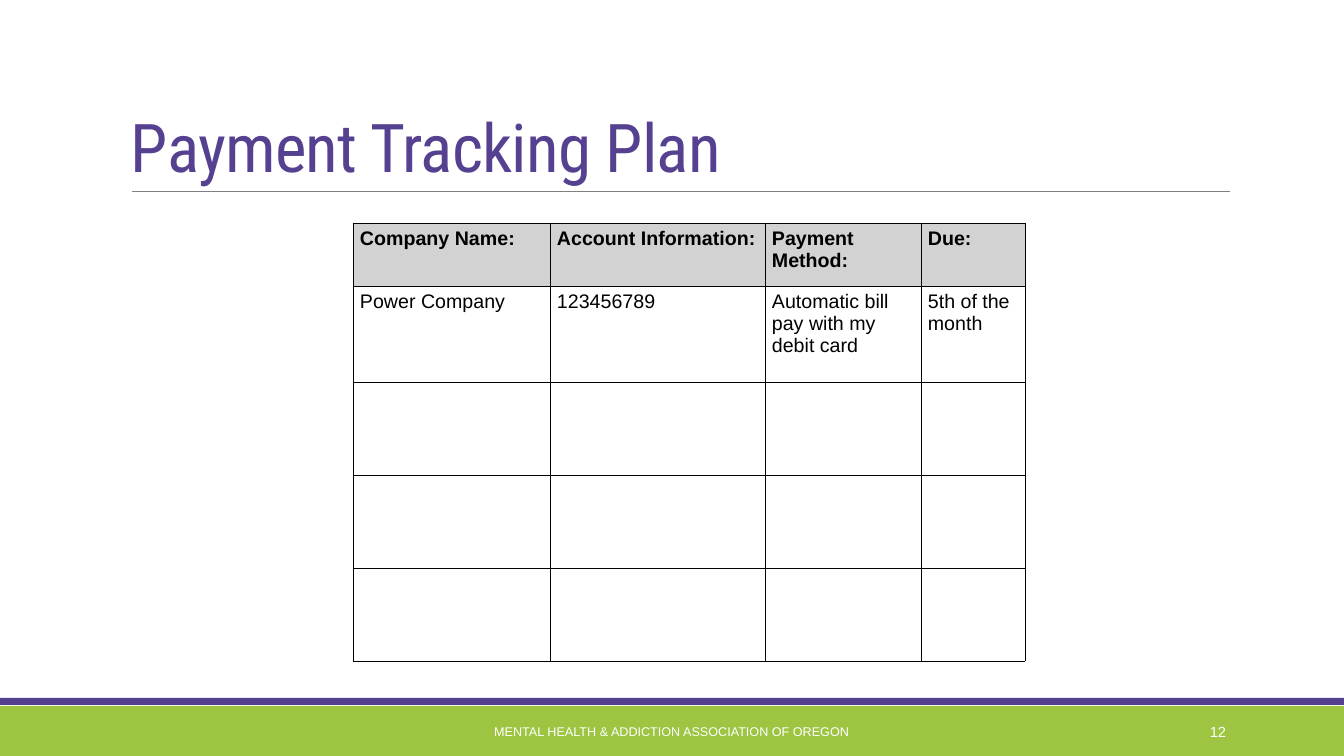
from lxml import etree
from pptx import Presentation
from pptx.dml.color import RGBColor
from pptx.enum.shapes import MSO_CONNECTOR, MSO_SHAPE
from pptx.enum.text import MSO_ANCHOR as Anchor, PP_ALIGN as Align
from pptx.oxml import parse_xml
from pptx.oxml.ns import nsdecls, qn
from pptx.util import Pt

PX = 914400 / 100.8
PURPLE = RGBColor(0x56, 0x41, 0x91)
GREEN = RGBColor(0x9D, 0xC5, 0x41)
GRAY = RGBColor(0x80, 0x80, 0x80)
HEADER_GRAY = RGBColor(0xD2, 0xD2, 0xD2)
BLACK = RGBColor(0, 0, 0)
WHITE = RGBColor(0xFF, 0xFF, 0xFF)


def px(*lengths):
    return [round(length * PX) for length in lengths]


def add_text(place, text, size, font, color, align, anchor):
    box = page.shapes.add_textbox(*px(*place))
    frame = box.text_frame
    frame.word_wrap = True
    frame.vertical_anchor = anchor
    para = frame.paragraphs[0]
    para.text = text
    para.alignment = align
    para.font.size, para.font.name = Pt(size), font
    para.font.color.rgb = color
    return para


deck = Presentation()
deck.slide_width, deck.slide_height = px(1344, 756)
page = deck.slides.add_slide(deck.slide_layouts[6])

# Footer bands
for top, height, color in [(706, 50, GREEN), (698, 7, PURPLE)]:
    band = page.shapes.add_shape(MSO_SHAPE.RECTANGLE, *px(0, top, 1344, height))
    band.shadow.inherit = False
    band.fill.solid()
    band.fill.fore_color.rgb = color
    band.line.fill.background()

# Title and rule
rule = page.shapes.add_connector(MSO_CONNECTOR.STRAIGHT, *px(132, 191, 1230, 191))
rule.line.color.rgb = GRAY
rule.line.width = Pt(0.5)
etree.SubElement(rule._element.spPr, qn("a:effectLst"))

title = add_text((121, 31, 1109, 160), "Payment Tracking Plan", 48,
                 "Roboto Condensed", PURPLE, Align.LEFT, Anchor.BOTTOM)
title.line_spacing = 0.85
title.runs[0]._r.get_or_add_rPr().set("spc", "-50")

# Payment table
column_widths = px(197, 215, 156, 104)
row_heights = px(63, 96, 93, 93, 93)
entries = [
    ["Company Name:", "Account Information:", "Payment Method:", "Due:"],
    ["Power Company", "123456789", "Automatic bill pay with my debit card",
     "5th of the month"],
]
table = page.shapes.add_table(len(row_heights), len(column_widths),
                              *px(353, 223, 672, 438)).table
table.first_row = table.horz_banding = False
for column, width in zip(table.columns, column_widths):
    column.width = width
for row, height in zip(table.rows, row_heights):
    row.height = height

for row_index, row in enumerate(table.rows):
    for column_index, cell in enumerate(row.cells):
        cell.margin_left, cell.margin_right = px(7, 7)
        cell.margin_top, cell.margin_bottom = px(5, 5)
        if row_index == 0:
            cell.fill.solid()
            cell.fill.fore_color.rgb = HEADER_GRAY
        else:
            cell.fill.background()
        if row_index < len(entries):
            para = cell.text_frame.paragraphs[0]
            para.text = entries[row_index][column_index]
            para.font.size, para.font.name = Pt(14), "Arial"
            para.font.bold = row_index == 0
            para.font.color.rgb = BLACK
        # Borders go ahead of the fill
        properties = cell._tc.get_or_add_tcPr()
        for position, side in enumerate("LRTB"):
            properties.insert(position, parse_xml(
                f'<a:ln{side} {nsdecls("a")} w="{Pt(0.5)}"><a:solidFill>'
                f'<a:srgbClr val="{BLACK}"/></a:solidFill></a:ln{side}>'))

# Footer text
add_text((406, 712, 531, 40), "MENTAL HEALTH & ADDICTION ASSOCIATION OF OREGON",
         9, "Arial", WHITE, Align.CENTER, Anchor.MIDDLE)
add_text((1092, 712, 144, 40), "12", 10.5, "Arial", WHITE, Align.RIGHT, Anchor.MIDDLE)

deck.save("out.pptx")
